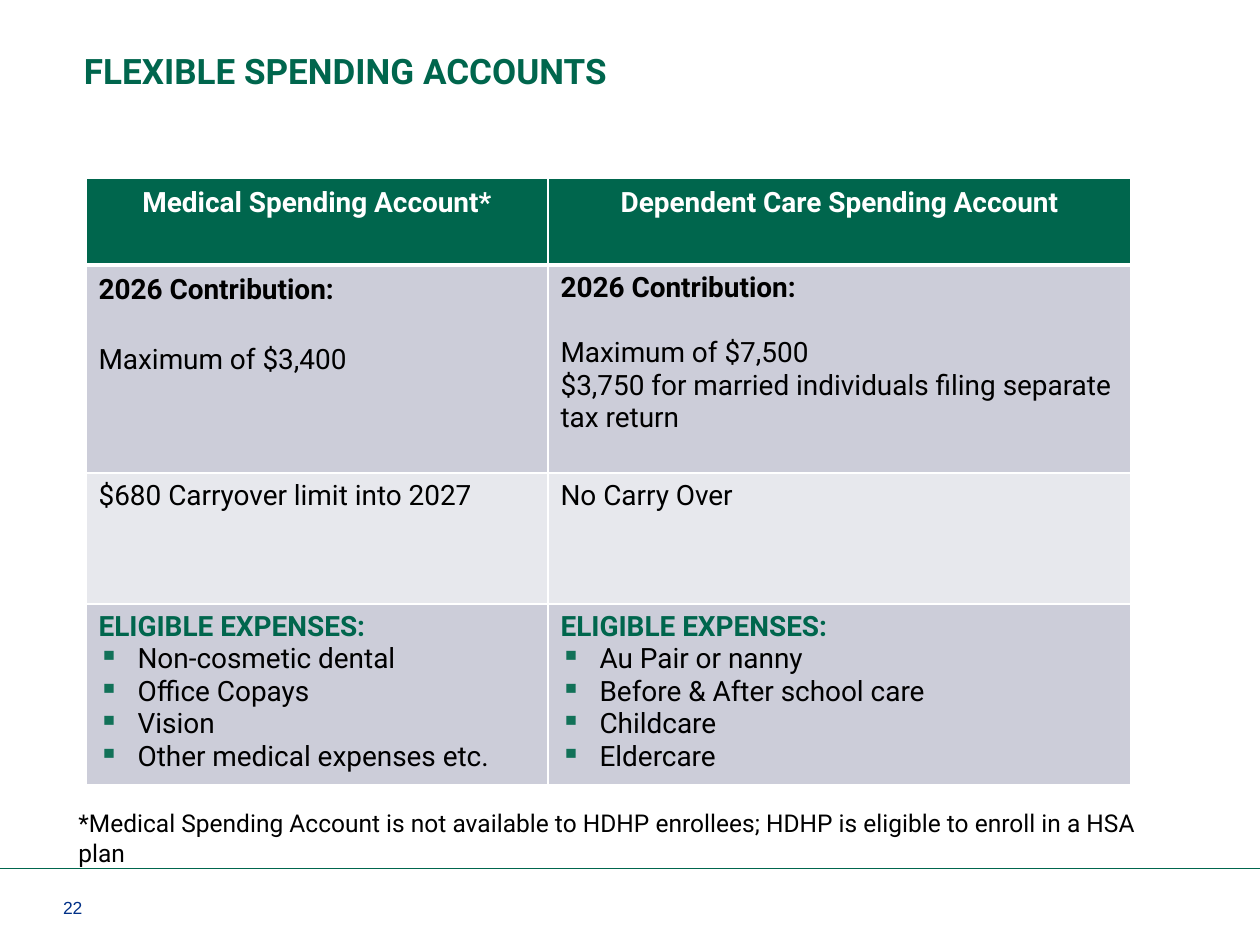
from dataclasses import dataclass

from lxml.etree import SubElement as Sub
from pptx import Presentation
from pptx.dml.color import RGBColor as RGB
from pptx.enum.shapes import MSO_CONNECTOR as Link
from pptx.enum.text import MSO_ANCHOR as Anchor, MSO_AUTO_SIZE as Fit, PP_ALIGN as Align
from pptx.oxml.ns import qn
from pptx.util import Pt

PX = 914400 // 126


@dataclass(frozen=True)
class Theme:
    green: str = "00664D"
    bullet: str = "117158"
    navy: str = "003087"
    black: str = "000000"
    white: str = "FFFFFF"
    dark: str = "CCCDD9"
    light: str = "E7E8ED"
    face: str = "Roboto"
    title: int = 20
    body: int = 16
    note: int = 14
    num: int = 10


T = Theme()


def style(para, size, color, bold=False, face=T.face):
    font = para.font
    font.name, font.size, font.bold = face, Pt(size), bold
    font.color.rgb = RGB.from_string(color)


def place(shape, x, y, w, h):
    shape.left, shape.top, shape.width, shape.height = (v * PX for v in (x, y, w, h))


deck = Presentation()
deck.slide_width, deck.slide_height = 1260 * PX, 945 * PX
slide = deck.slides.add_slide(deck.slide_layouts[5])
shapes = slide.shapes

# Footer rule
rule = shapes.add_connector(Link.STRAIGHT, 0, 868 * PX, 1260 * PX, 868 * PX)
rule.line.color.rgb = RGB.from_string(T.green)
rule.line.width = Pt(0.5)
Sub(rule._element.spPr, qn("a:effectLst"))

# Page number
page = shapes.add_textbox(0, 0, 0, 0)
place(page, 63, 892, 68, 32)
frame = page.text_frame
frame.text = "22"
frame.word_wrap = True
frame.margin_left = frame.margin_right = 0
frame.vertical_anchor = Anchor.BOTTOM
style(frame.paragraphs[0], T.num, T.navy, face="Arial")

# Title
title = shapes.title
place(title, 84, 43, 1124, 92)
frame = title.text_frame
frame.text = "FLEXIBLE SPENDING ACCOUNTS"
frame.auto_size = Fit.NONE
frame.margin_left = frame.margin_right = 0
frame.vertical_anchor = Anchor.TOP
frame.paragraphs[0].alignment = Align.LEFT
style(frame.paragraphs[0], T.title, T.green, True)

# Table: each cell lists its lines
wide = [462, 583]
high = [87, 208, 131, 175]
fills = [T.green, T.dark, T.light, T.dark]
rows = [
    [["Medical Spending Account*"], ["Dependent Care Spending Account"]],
    [
        ["2026 Contribution:", "Maximum of $3,400"],
        ["2026 Contribution:", "Maximum of $7,500",
         "$3,750 for married individuals filing separate tax return"],
    ],
    [["$680 Carryover limit into 2027"], ["No Carry Over"]],
    [
        ["ELIGIBLE EXPENSES:", "Non-cosmetic dental", "Office Copays",
         "Vision", "Other medical expenses etc."],
        ["ELIGIBLE EXPENSES:", "Au Pair or nanny", "Before & After school care",
         "Childcare", "Eldercare"],
    ],
]
HEAD, LIMIT, CARRY, COSTS = range(4)
table = shapes.add_table(4, 2, 86 * PX, 178 * PX, sum(wide) * PX, sum(high) * PX).table
for col, w in zip(table.columns, wide):
    col.width = w * PX
for row, h in zip(table.rows, high):
    row.height = h * PX

for r, row in enumerate(rows):
    for c, lines in enumerate(row):
        cell = table.cell(r, c)
        # White borders, heavier under the header
        props = cell._tc.get_or_add_tcPr()
        for side in "LRTB":
            heavy = (r, side) in ((HEAD, "B"), (LIMIT, "T"))
            edge = Sub(props, qn(f"a:ln{side}"), w=str(Pt(3 if heavy else 1)))
            Sub(Sub(edge, qn("a:solidFill")), qn("a:srgbClr"), val=T.white)
        cell.fill.solid()
        cell.fill.fore_color.rgb = RGB.from_string(fills[r])

        cell.text_frame.text = "\n".join(lines)
        for i, para in enumerate(cell.text_frame.paragraphs):
            first = i == 0
            color = T.black
            if r == HEAD:
                para.alignment = Align.CENTER
                color = T.white
            if r == HEAD or (r == LIMIT and c == 0):
                para.line_spacing = 1.07
            if r == LIMIT and i == 1:
                para.space_before = (35 if c == 0 else 33) * PX
            if r == COSTS and first:
                color = T.green
            elif r == COSTS:
                ppr = para._p.get_or_add_pPr()
                ppr.set("marL", str(39 * PX))
                ppr.set("indent", str(-39 * PX))
                Sub(Sub(ppr, qn("a:buClr")), qn("a:srgbClr"), val=T.bullet)
                Sub(ppr, qn("a:buChar"), char="▪")
            style(para, T.body, color, first and r != CARRY)

# Footnote
note = shapes.add_textbox(0, 0, 0, 0)
place(note, 66, 802, 1087, 72)
frame = note.text_frame
frame.text = ("*Medical Spending Account is not available to HDHP enrollees; "
              "HDHP is eligible to enroll in a HSA plan")
frame.word_wrap = True
style(frame.paragraphs[0], T.note, T.black)

deck.save("out.pptx")
